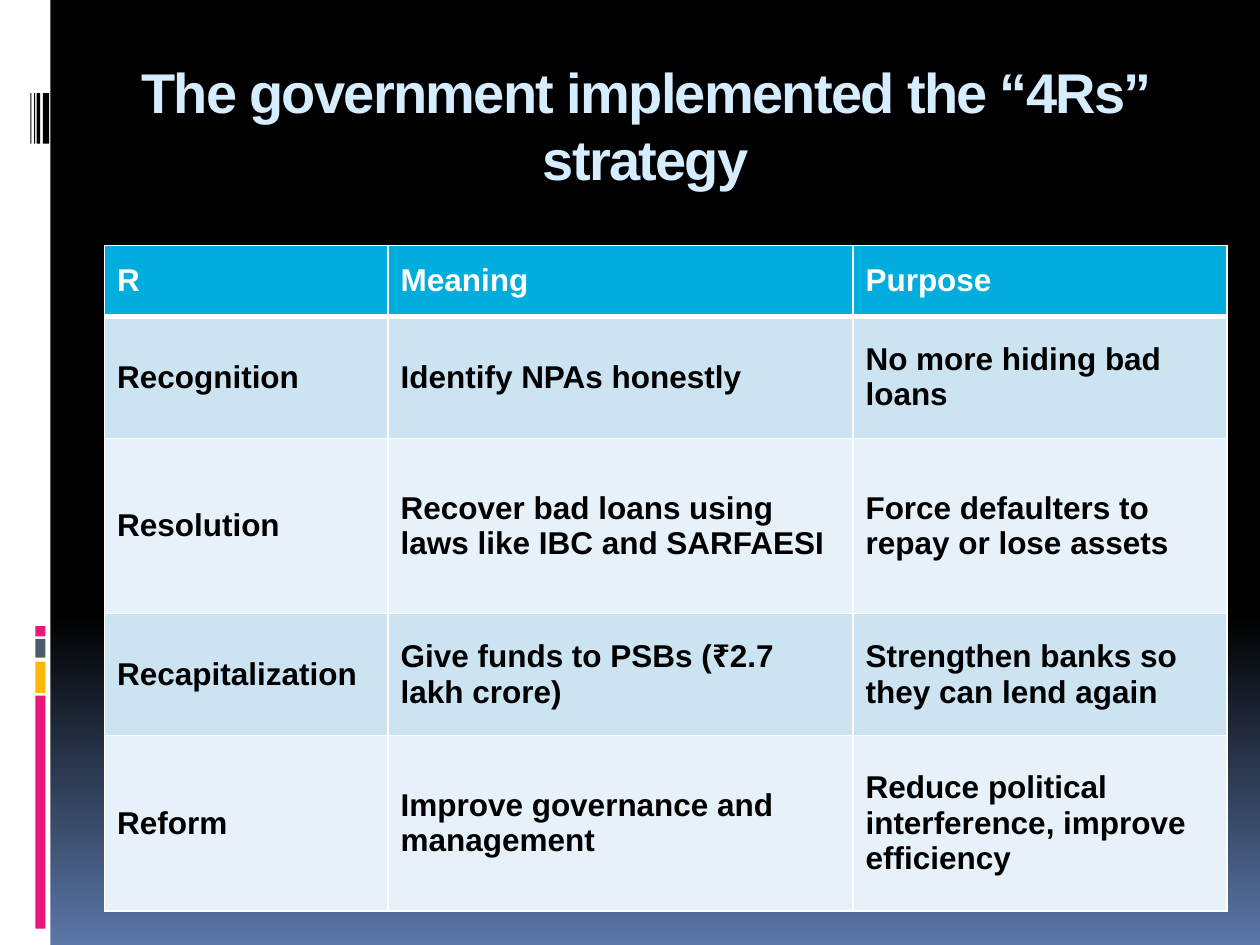
"""Builds a slide with a table of the government's "4Rs" strategy."""
from lxml import etree
from pptx import Presentation
from pptx import util as u
from pptx.dml.color import RGBColor
from pptx.enum import shapes, text
from pptx.oxml.ns import qn

WHITE = RGBColor(0xFF, 0xFF, 0xFF)
BLACK = RGBColor(0, 0, 0)
DUSK = RGBColor(0x5B, 0x77, 0xA8)
PINK = RGBColor(0xEA, 0x15, 0x7A)
AMBER = RGBColor(0xFE, 0xB8, 0x0A)
SLATE = RGBColor(0x4E, 0x5B, 0x6F)
ICE = RGBColor(0xD6, 0xEC, 0xFF)
CYAN = RGBColor(0x00, 0xAD, 0xDC)
BANDS = RGBColor(0xCC, 0xE3, 0xF2), RGBColor(0xE7, 0xF1, 0xF9)
FONT = "Arial"

TITLE = "The government implemented the “4Rs” strategy"
STRATEGY = [
    ("R", "Meaning", "Purpose"),
    ("Recognition", "Identify NPAs honestly", "No more hiding bad loans"),
    ("Resolution", "Recover bad loans using laws like IBC and SARFAESI",
     "Force defaulters to repay or lose assets"),
    ("Recapitalization", "Give funds to PSBs (₹2.7 lakh crore)",
     "Strengthen banks so they can lend again"),
    ("Reform", "Improve governance and management",
     "Reduce political interference, improve efficiency"),
]
COLUMN_WIDTHS = [2.25, 3.69, 2.97]
ROW_HEIGHTS = [0.56, 0.97, 1.39, 0.97, 1.39]

COLOUR_BARS = [(5.52, 1.85, PINK), (5.25, 0.25, AMBER),
               (5.07, 0.15, SLATE), (4.97, 0.08, PINK)]
BARCODE = [(0.34, 0.05), (0.29, 0.03), (0.27, 0.01), (0.24, 0.01)]
SIDE_PARTS = [(0, 0, 0.4, 7.5, WHITE)]
SIDE_PARTS += [(0.28, top, 0.08, height, colour) for top, height, colour in COLOUR_BARS]
SIDE_PARTS += [(left, 0.74, width, 0.4, BLACK) for left, width in BARCODE]


def paint_background(slide):
    fill = slide.background.fill
    fill.gradient()
    fill.gradient_angle = 270
    for stop, position, colour in zip(fill.gradient_stops, (0.65, 1), (BLACK, DUSK)):
        stop.position = position
        stop.color.rgb = colour


def add_block(slide, left, top, width, height, colour):
    block = slide.shapes.add_shape(
        shapes.MSO_SHAPE.RECTANGLE, *map(u.Inches, (left, top, width, height)))
    block.shadow.inherit = False
    block.fill.solid()
    block.fill.fore_color.rgb = colour
    block.line.fill.background()


def style_font(paragraph, size, colour):
    font = paragraph.font
    font.name, font.size, font.bold = FONT, u.Pt(size), True
    font.color.rgb = colour


def write_title(slide):
    title = slide.shapes.title
    title.left, title.top, title.width, title.height = map(u.Inches, (0.75, 0.42, 8.75, 1.14))
    frame = title.text_frame
    frame.text = TITLE
    frame.word_wrap = True
    frame.vertical_anchor = text.MSO_ANCHOR.MIDDLE
    heading = frame.paragraphs[0]
    heading.alignment = text.PP_ALIGN.CENTER
    style_font(heading, 32, ICE)
    heading.runs[0].font.size = u.Pt(32)
    heading.runs[0]._r.get_or_add_rPr().set("spc", "-100")


def set_borders(cell, **weights):
    properties = cell._tc.get_or_add_tcPr()
    for index, (side, weight) in enumerate(weights.items()):
        line = etree.Element(qn(f"a:{side}"), w=str(u.Pt(weight)))
        fill = etree.SubElement(line, qn("a:solidFill"))
        etree.SubElement(fill, qn("a:srgbClr"), val=str(WHITE))
        properties.insert(index, line)


def add_strategy_table(slide):
    table = slide.shapes.add_table(
        len(STRATEGY), len(COLUMN_WIDTHS), u.Inches(0.83), u.Inches(1.95),
        u.Inches(sum(COLUMN_WIDTHS)), u.Inches(sum(ROW_HEIGHTS))).table
    for column, width in zip(table.columns, COLUMN_WIDTHS):
        column.width = u.Inches(width)
    for r, (row, height, entries) in enumerate(zip(table.rows, ROW_HEIGHTS, STRATEGY)):
        row.height = u.Inches(height)
        for cell, entry in zip(row.cells, entries):
            cell.text = entry
            cell.vertical_anchor = text.MSO_ANCHOR.MIDDLE
            cell.fill.solid()
            cell.fill.fore_color.rgb = BANDS[(r - 1) % 2] if r else CYAN
            style_font(cell.text_frame.paragraphs[0], 18, BLACK if r else WHITE)
            set_borders(cell, lnL=1, lnR=1, lnT=3 if r == 1 else 1, lnB=1 if r else 3)


def main():
    deck = Presentation()
    deck.slide_width, deck.slide_height = u.Inches(10), u.Inches(7.5)
    slide = deck.slides.add_slide(deck.slide_layouts[5])
    paint_background(slide)
    for part in SIDE_PARTS:
        add_block(slide, *part)
    write_title(slide)
    add_strategy_table(slide)
    deck.save("out.pptx")


if __name__ == "__main__":
    main()
